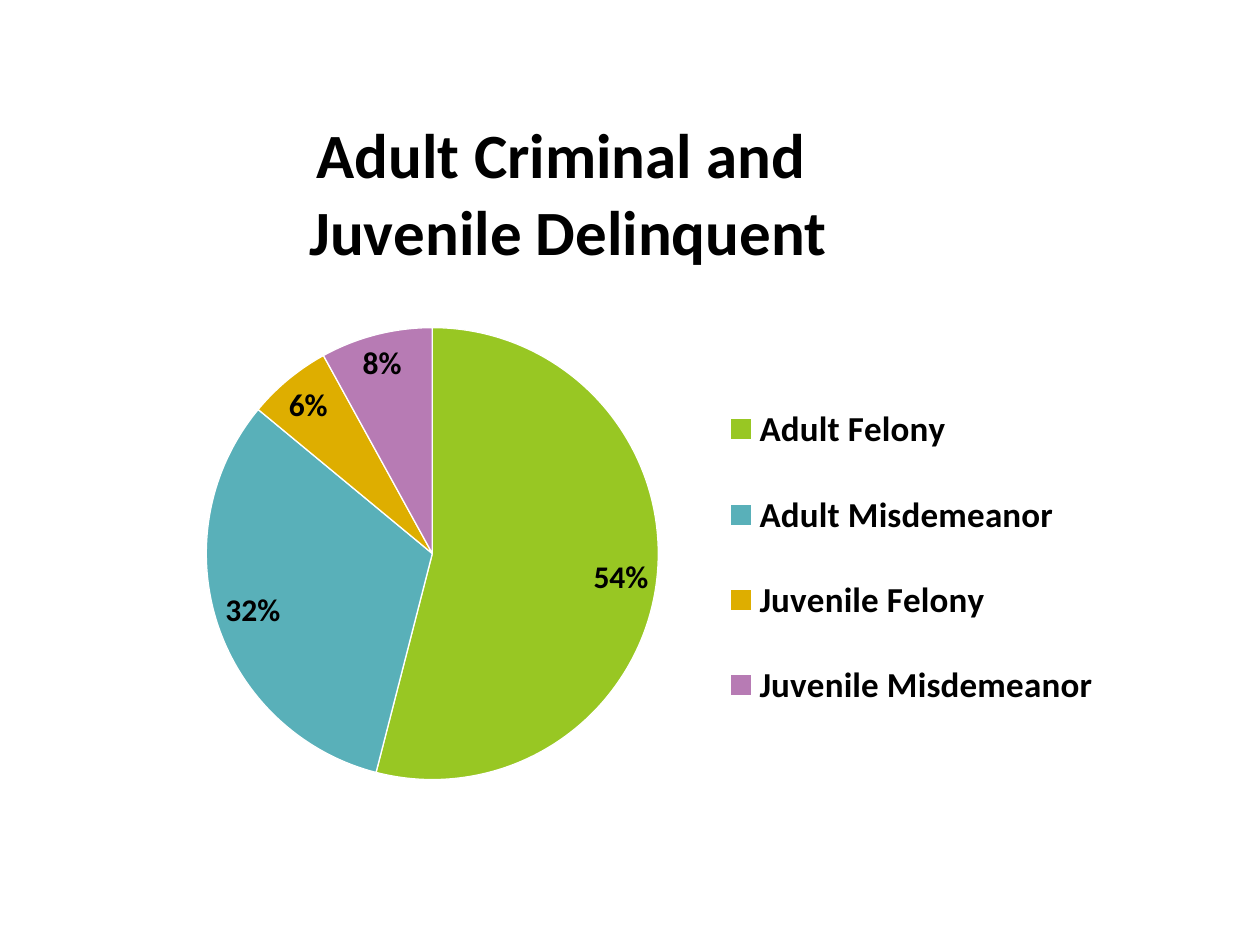
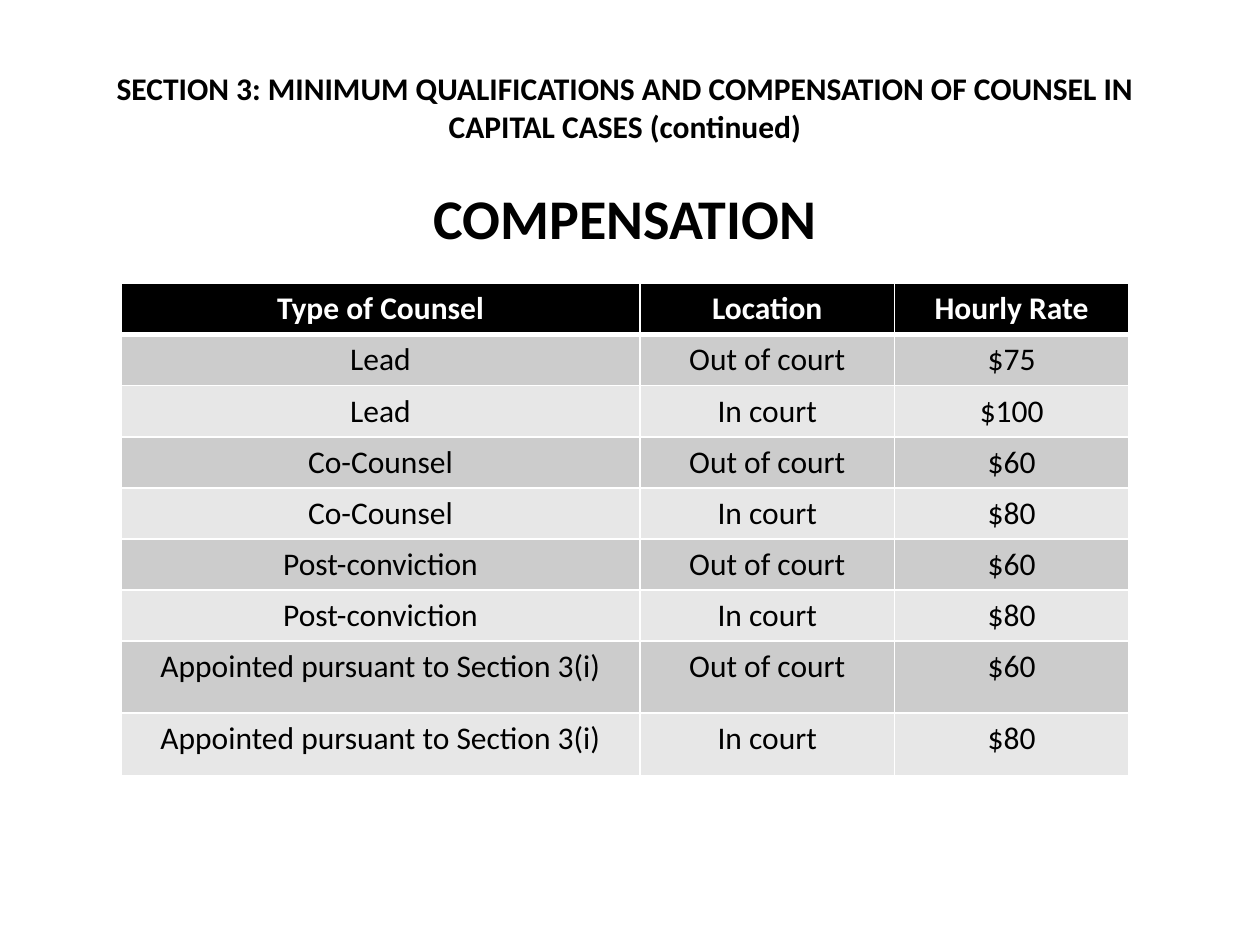
from lxml import etree
from pptx import Presentation
from pptx import util as u
from pptx.chart.data import CategoryChartData
from pptx.dml.color import RGBColor
from pptx.enum import chart as ch, text
from pptx.oxml import parse_xml
from pptx.oxml.ns import nsdecls, qn

FONT = "Calibri"
BLACK = RGBColor(0, 0, 0)
WHITE = RGBColor(255, 255, 255)
BANDS = [RGBColor(0xE7, 0xE7, 0xE7), RGBColor(0xCC, 0xCC, 0xCC)]
SLICES = [RGBColor(0x98, 0xC7, 0x23), RGBColor(0x59, 0xB0, 0xB9),
          RGBColor(0xDE, 0xAE, 0x00), RGBColor(0xB7, 0x7B, 0xB4)]


def style(font, size, color=BLACK, bold=True):
    font.name, font.size, font.bold = FONT, u.Pt(size), bold
    font.color.rgb = color


def set_layout(parent, index, **fractions):
    """Place a chart part by fractions of the chart area."""
    for old in parent.findall(qn("c:layout")):
        parent.remove(old)
    inner = '<c:layoutTarget val="inner"/>' if index == 0 else ""
    modes = '<c:xMode val="edge"/><c:yMode val="edge"/>'
    values = "".join(f'<c:{k} val="{v}"/>' for k, v in fractions.items())
    parent.insert(index, parse_xml(
        f'<c:layout {nsdecls("c")}><c:manualLayout>{inner}{modes}{values}'
        '</c:manualLayout></c:layout>'))


prs = Presentation()
prs.slide_width, prs.slide_height = u.Inches(10), u.Inches(7.5)

# Slide 1: share of cases as a pie chart
s = prs.slides.add_slide(prs.slide_layouts[6])
data = CategoryChartData()
data.categories = ["Adult Felony", "Adult Misdemeanor",
                   "Juvenile Felony", "Juvenile Misdemeanor"]
data.add_series("Series 1", (54, 32, 6, 8))
chart = s.shapes.add_chart(ch.XL_CHART_TYPE.PIE, u.Inches(0.5), u.Inches(0.83),
                           u.Inches(8.75), u.Inches(5.75), data).chart
style(chart.font, 10, bold=False)

# Chart title
tf = chart.chart_title.text_frame
tf.text = "Adult Criminal and \nJuvenile Delinquent"
for p in tf.paragraphs:
    style(p.runs[0].font, 36)
set_layout(tf._txBody.getparent().getparent(), 1, x=0.22, y=0.01)

# Slices and percentages
plot = chart.plots[0]
plot.vary_by_categories = True
for i, color in enumerate(SLICES):
    fmt = plot.series[0].points[i].format
    fmt.fill.solid()
    fmt.fill.fore_color.rgb = color
    fmt.line.color.rgb = WHITE
    fmt.line.width = u.Pt(0.75)
plot.has_data_labels = True
labels = plot.data_labels
labels.show_percentage, labels.show_value = True, False
labels.number_format, labels.number_format_is_linked = "0%", False
labels.position = ch.XL_LABEL_POSITION.BEST_FIT
style(labels.font, 18)
plot_area = chart._chartSpace.find(".//" + qn("c:plotArea"))
set_layout(plot_area, 0, x=0.13, y=0.28, w=0.41, h=0.68)

# Legend
chart.has_legend = True
chart.legend.position = ch.XL_LEGEND_POSITION.RIGHT
chart.legend.include_in_layout = False
style(chart.legend.font, 20)
set_layout(chart.legend._element, 1, x=0.59, y=0.36, w=0.36, h=0.53)

# Slide 2: heading
s = prs.slides.add_slide(prs.slide_layouts[5])
title = s.shapes.title
title.left, title.top = u.Inches(0.67), u.Inches(0.5)
title.width, title.height = u.Inches(8.58), u.Inches(1.55)
tf = title.text_frame
tf.text = ("SECTION 3: MINIMUM QUALIFICATIONS AND COMPENSATION OF COUNSEL IN "
           "CAPITAL CASES (continued)\nCOMPENSATION")
tf.word_wrap = True
tf.auto_size = text.MSO_AUTO_SIZE.NONE
tf.vertical_anchor = text.MSO_ANCHOR.TOP
for p, size in zip(tf.paragraphs, (18, 32)):
    p.alignment = text.PP_ALIGN.CENTER
    style(p.runs[0].font, size)
tf.paragraphs[1].space_before = u.Pt(22)

# Hourly rates: counsel, out-of-court rate, in-court rate
rates = [("Lead", "$75", "$100"), ("Co-Counsel", "$60", "$80"),
         ("Post-conviction", "$60", "$80"),
         ("Appointed pursuant to Section 3(i)", "$60", "$80")]
rows = [("Type of Counsel", "Location", "Hourly Rate")]
for counsel, out_rate, in_rate in rates:
    rows += [(counsel, "Out of court", out_rate), (counsel, "In court", in_rate)]

table = s.shapes.add_table(len(rows), 3, u.Inches(0.96), u.Inches(2.25),
                           u.Inches(8), u.Inches(3.73)).table
for col, width in zip(table.columns, (4.12, 2.02, 1.86)):
    col.width = u.Inches(width)
for row, height in zip(table.rows, [0.4] * 7 + [0.57, 0.5]):
    row.height = u.Inches(height)

for i, row in enumerate(rows):
    for j, value in enumerate(row):
        cell = table.cell(i, j)
        cell.text = value
        p = cell.text_frame.paragraphs[0]
        p.alignment = text.PP_ALIGN.CENTER
        style(p.runs[0].font, 18, BLACK if i else WHITE, bold=i == 0)
        # White rules, heavier below the header; borders precede the fill
        tcPr = cell._tc.get_or_add_tcPr()
        for side in "LRTB":
            heavy = (i, side) in ((0, "B"), (1, "T"))
            ln = etree.SubElement(tcPr, qn("a:ln" + side),
                                  w=str(u.Pt(3 if heavy else 1)))
            fill = etree.SubElement(ln, qn("a:solidFill"))
            etree.SubElement(fill, qn("a:srgbClr"), val=str(WHITE))
        cell.fill.solid()
        cell.fill.fore_color.rgb = BANDS[i % 2] if i else BLACK

prs.save("out.pptx")
